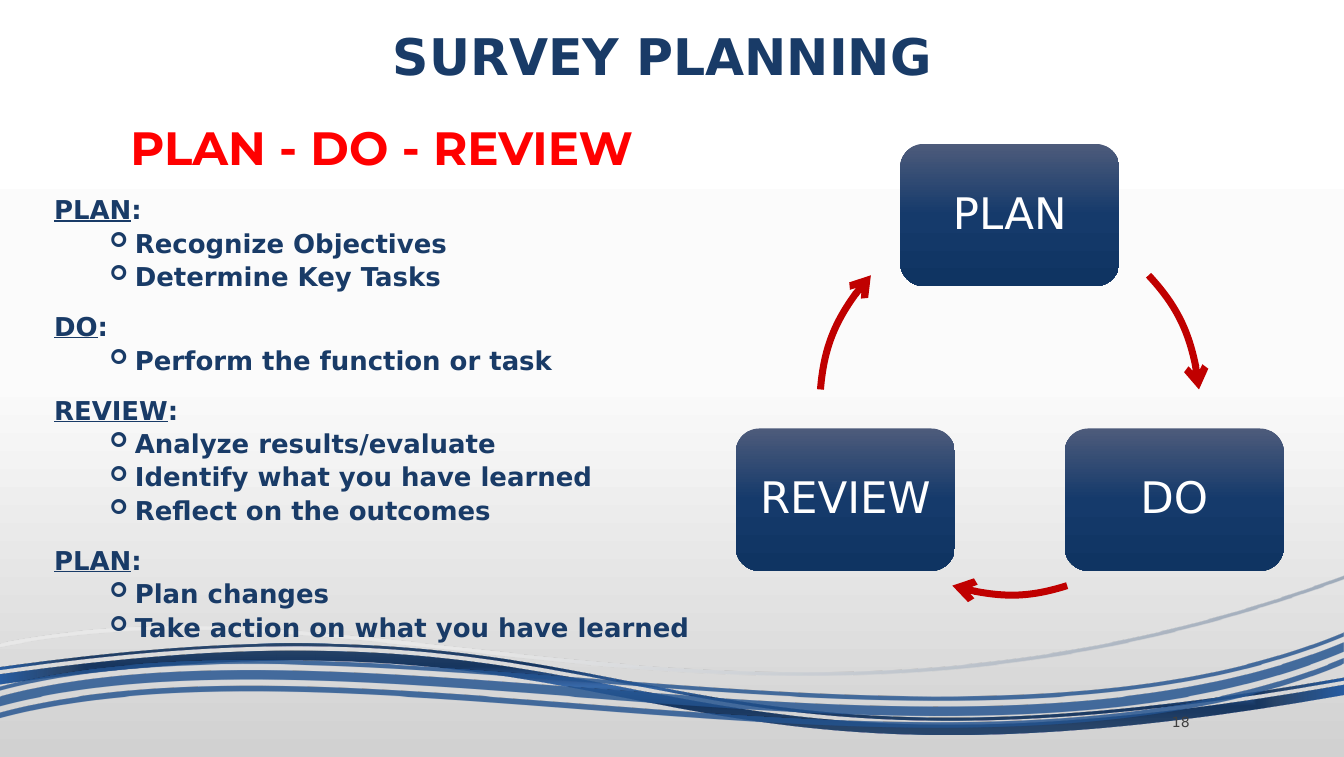
from math import cos, radians, sin, tan

from lxml import etree
from pptx import Presentation
from pptx.dml.color import RGBColor
from pptx.enum.shapes import MSO_SHAPE
from pptx.enum.text import MSO_ANCHOR, MSO_AUTO_SIZE, PP_ALIGN
from pptx.oxml.ns import qn
from pptx.util import Inches, Pt

ROUNDED = MSO_SHAPE.ROUNDED_RECTANGLE
MIDDLE, TOP = MSO_ANCHOR.MIDDLE, MSO_ANCHOR.TOP
CENTER, LEFT, RIGHT = PP_ALIGN.CENTER, PP_ALIGN.LEFT, PP_ALIGN.RIGHT
NO_AUTOFIT = MSO_AUTO_SIZE.NONE

THEME = {
    "title": ("DejaVu Sans", 36, "193B67", True, CENTER),
    "motto": ("Montserrat", 33.3, "FF0000", True, CENTER),
    "body": ("DejaVu Sans", 18.5, "193B67", True, LEFT),
    "node_label": ("DejaVu Sans", 31, "FFFFFF", False, CENTER),
    "number": ("DejaVu Sans", 10, "3F3F3F", False, RIGHT),
    "arrow": "C00000",
    "backdrop": [(0, "FFFFFF", 100), (50, "FBFBFB", 100), (100, "D1D1D1", 100)],
    "node": [(0, "4D5B7B", 100), (50, "153A6B", 100), (100, "0F3462", 100)],
    "dark_wave": [(0, "285EA4", 90), (18, "17365F", 100), (37, "17365E", 90), (100, "285EA4", 100)],
    "pale_wave": [(36, "FFFFFF", 30), (100, "193B67", 48)],
    "blue_wave": [(36, "FFFFFF", 47), (100, "23528F", 82)],
}


def paint_gradient(fill, owner, stops, angle=90, focus=None):
    fill.gradient()
    fill.gradient_angle = 360 - angle
    gradient = owner.find(".//" + qn("a:gradFill"))
    stop_list = gradient.find(qn("a:gsLst"))
    for old_stop in list(stop_list):
        stop_list.remove(old_stop)
    for position, color, opacity in stops:
        stop = etree.SubElement(stop_list, qn("a:gs"), pos=str(position * 1000))
        rgb = etree.SubElement(stop, qn("a:srgbClr"), val=color)
        if opacity < 100:
            etree.SubElement(rgb, qn("a:alpha"), val=str(opacity * 1000))
    if focus:
        kind, sides = focus
        gradient.remove(gradient.find(qn("a:lin")))
        radial = etree.SubElement(gradient, qn("a:path"), path=kind)
        etree.SubElement(radial, qn("a:fillToRect"),
                         {side: str(share * 1000) for side, share in zip("ltrb", sides)})


def draw_curves(box, contours, closed, tilt=0):
    left, top, width, height = box
    builder = slide.shapes.build_freeform(int(left), int(top), scale=1.0)
    builder.add_line_segments([(int(left + width), int(top + height))], close=False)
    curve = builder.convert_to_shape()
    curve.shadow.inherit = False
    curve.rotation = -tilt
    route = curve.element.find(".//" + qn("a:pathLst")).find(qn("a:path"))
    for old_step in list(route):
        route.remove(old_step)
    turn = radians(tilt)
    for contour in contours:
        for index, points in enumerate(contour):
            verb = "moveTo" if index == 0 else "lnTo" if len(points) == 1 else "cubicBezTo"
            move = etree.SubElement(route, qn("a:" + verb))
            for x, y in points:
                dx, dy = x - left - width / 2, y - top - height / 2
                etree.SubElement(move, qn("a:pt"),
                                 x=str(int(width / 2 + dx * cos(turn) - dy * sin(turn))),
                                 y=str(int(height / 2 + dx * sin(turn) + dy * cos(turn))))
        if closed:
            etree.SubElement(route, qn("a:close"))
    return curve


deck = Presentation()
deck.slide_width, deck.slide_height = Inches(13.31), Inches(7.5)
COL, ROW = deck.slide_width / 100, deck.slide_height / 100
slide = deck.slides.add_slide(deck.slide_layouts[5])
paint_gradient(slide.background.fill, slide.element, THEME["backdrop"])
styled = []

dark_top = [(0, 89.07), (9.32, 86.8), (16.68, 85.87), (22.92, 86),
            (50.26, 86.27), (55.3, 104.27), (100, 90.4)]
dark_bottom = [(0, 90.4), (50.04, 77.73), (45.15, 108.8), (100, 91.73)]
pale_edge = [(0, 84.93), (27.95, 74.53), (56.5, 104.53), (100, 76)]
blue_edge = [(0, 94.13), (26.15, 81.6), (71.6, 108), (100, 86.93)]
waves = [
    ((0.08, 81.6, 99.77, 18), dark_top, dark_bottom, [(0, 0), (-0.93, -1.87)],
     "dark_wave", 0, ("shape", (50, 50, 50, 50))),
    ((0.23, 78.4, 100.08, 22.8), pale_edge, pale_edge, [(0, 0.48)], "pale_wave", 45, None),
    ((-0.08, 83.33, 100.15, 15.33), blue_edge, blue_edge,
     [(0, 0.75), (-2.1, -0.83), (-3.4, -2.87)], "blue_wave", 0, ("rect", (100, 100, 0, 0))),
]
for (left, top, width, height), upper, lower, bands, palette, angle, focus in waves:
    contours = []
    for rise, fall in bands:
        there = [(x * COL, (y + rise) * ROW) for x, y in upper]
        back = [(x * COL, (y + fall) * ROW) for x, y in reversed(lower)]
        contour = []
        for edge in (there, back):
            contour.append(edge[:1])
            contour += [edge[i:i + 3] for i in range(1, len(edge), 3)]
        contours.append(contour)
    wave = draw_curves((left * COL, top * ROW, width * COL, height * ROW), contours, True, 3.5)
    wave.line.fill.background()
    paint_gradient(wave.fill, wave.element, THEME[palette], angle, focus)

title = slide.shapes.title
title.left, title.top = int(10.59 * COL), int(4.2 * ROW)
title.width, title.height = int(78.74 * COL), int(15.07 * ROW)
heading_frame = title.text_frame
heading_frame.text = "SURVEY PLANNING"
heading_frame.auto_size = NO_AUTOFIT
heading_frame.vertical_anchor = TOP
heading_frame.margin_top, heading_frame.margin_right = 0, Inches(0.28)
heading_frame.paragraphs[0].line_spacing = 0.9
styled.append((heading_frame.paragraphs[0], "title"))

outline_box = slide.shapes.add_textbox(int(3.29 * COL), int(16.5 * ROW),
                                       int(50.26 * COL), int(70.4 * ROW))
phases = outline_box.text_frame
phases.word_wrap = True
phases.vertical_anchor = TOP
phases.text = "PLAN - DO - REVIEW"
phases.paragraphs[0].line_spacing = 0.8
styled.append((phases.paragraphs[0], "motto"))

steps_by_phase = [
    ("PLAN", ["Recognize Objectives", "Determine Key Tasks"]),
    ("DO", ["Perform the function or task"]),
    ("REVIEW", ["Analyze results/evaluate", "Identify what you have learned",
                "Reflect on the outcomes"]),
    ("PLAN", ["Plan changes", "Take action on what you have learned"]),
]
for phase, steps in steps_by_phase:
    heading = phases.add_paragraph()
    heading.line_spacing, heading.space_before = 0.8, Pt(18)
    for part in (phase, ":"):
        run = heading.add_run()
        run.text = part
        run.font.underline = part == phase
    styled.append((heading, "body"))
    for step in steps:
        item = phases.add_paragraph()
        item.text = step
        item.level = 1
        item.line_spacing, item.space_before = 0.8, Pt(6)
        properties = item._p.get_or_add_pPr()
        properties.set("marL", str(Inches(0.8)))
        properties.set("indent", str(Inches(-0.25)))
        etree.SubElement(properties, qn("a:buSzPct"), val="80000")
        etree.SubElement(properties, qn("a:buFont"), typeface="Wingdings")
        etree.SubElement(properties, qn("a:buChar"), char="➢")
        styled.append((item, "body"))

hub_x, hub_y, radius = 75.13 * COL, 53.47 * ROW, 25.07 * ROW
node_width, node_height = 16.3 * COL, 18.8 * ROW
ring = (hub_x - radius, hub_y - radius, 2 * radius, 2 * radius)
cycle = [("PLAN", -90, -43, -4.6), ("DO", 30, 72.4, 107.6), ("REVIEW", 150, 184.6, 223)]
for phase, bearing, arc_start, arc_end in cycle:
    node = slide.shapes.add_shape(
        ROUNDED,
        int(hub_x + radius * cos(radians(bearing)) - node_width / 2),
        int(hub_y + radius * sin(radians(bearing)) - node_height / 2),
        int(node_width), int(node_height))
    node.shadow.inherit = False
    node.line.fill.background()
    paint_gradient(node.fill, node.element, THEME["node"])
    node.text_frame.text = phase
    node.text_frame.word_wrap = False
    node.text_frame.vertical_anchor = MIDDLE
    node.text_frame.paragraphs[0].line_spacing = 0.9
    styled.append((node.text_frame.paragraphs[0], "node_label"))

    reach = 4 / 3 * tan(radians(arc_end - arc_start) / 4)
    arc = []
    for degrees, pull in ((arc_start, 0), (arc_start, reach), (arc_end, -reach), (arc_end, 0)):
        b = radians(degrees)
        arc.append((hub_x + radius * (cos(b) - pull * sin(b)),
                    hub_y + radius * (sin(b) + pull * cos(b))))
    arrow = draw_curves(ring, [[arc[:1], arc[1:]]], False)
    arrow.fill.background()
    arrow.line.color.rgb = RGBColor.from_string(THEME["arrow"])
    arrow.line.width = Pt(5)
    etree.SubElement(arrow.element.find(".//" + qn("a:ln")), qn("a:tailEnd"), type="arrow")

page_number = slide.shapes.add_textbox(int(80.54 * COL), int(93.33 * ROW),
                                       int(8.72 * COL), int(4 * ROW))
page_number.text_frame.text = "18"
page_number.text_frame.word_wrap = True
page_number.text_frame.vertical_anchor = MIDDLE
styled.append((page_number.text_frame.paragraphs[0], "number"))

for paragraph, role in styled:
    font, size, color, bold, align = THEME[role]
    paragraph.alignment = align
    for run in paragraph.runs:
        run.font.name, run.font.size, run.font.bold = font, Pt(size), bold
        run.font.color.rgb = RGBColor.from_string(color)

deck.save("out.pptx")
